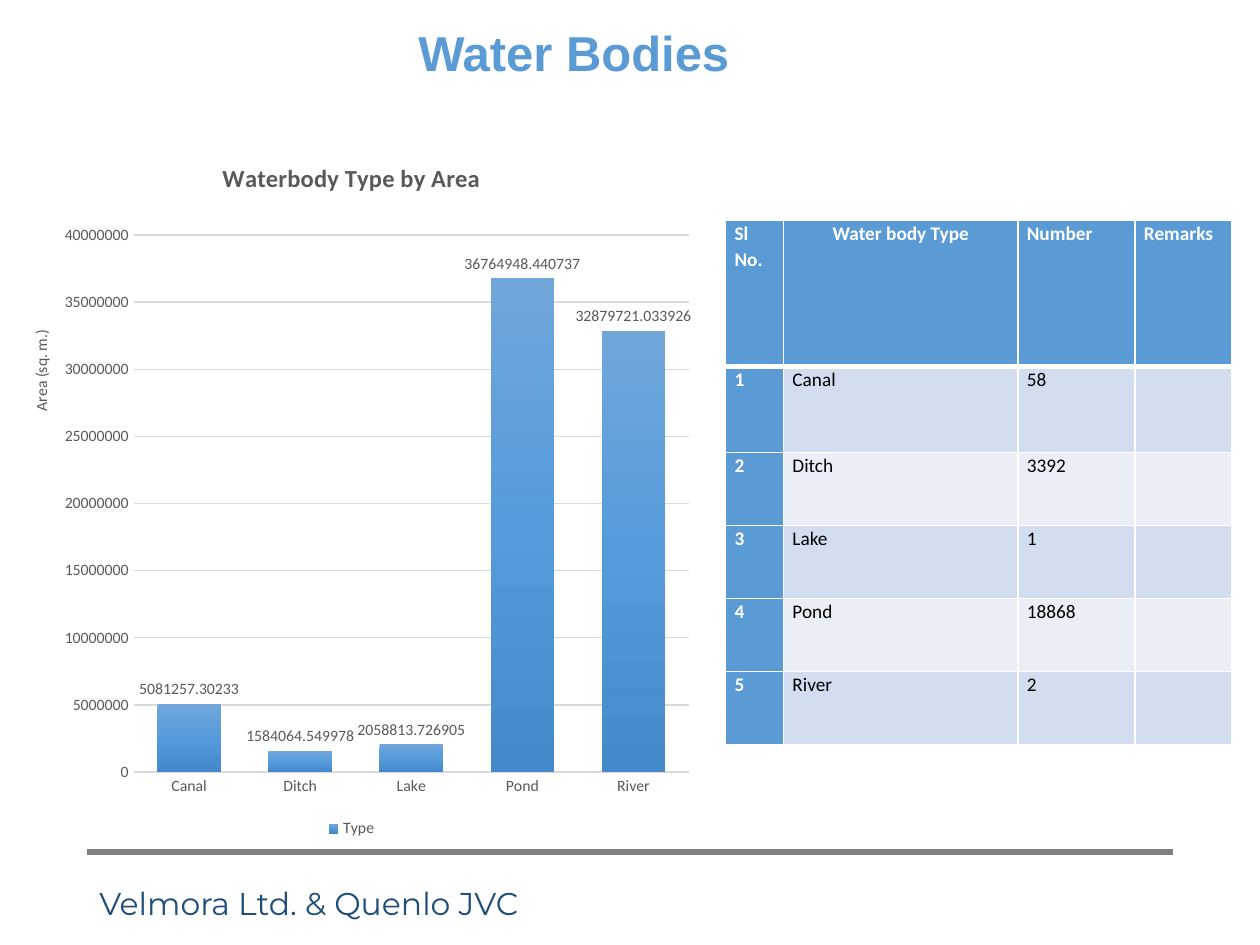
from lxml import etree
from pptx import Presentation
from pptx.chart.data import CategoryChartData
from pptx.dml.color import RGBColor
from pptx.enum.chart import XL_CHART_TYPE, XL_LABEL_POSITION, XL_LEGEND_POSITION, XL_TICK_MARK
from pptx.enum.shapes import MSO_CONNECTOR
from pptx.enum.text import MSO_ANCHOR, PP_ALIGN
from pptx.oxml import parse_xml
from pptx.oxml.ns import nsdecls, qn
from pptx.util import Inches, Pt

COLUMN = XL_CHART_TYPE.COLUMN_CLUSTERED
OUTSIDE_END = XL_LABEL_POSITION.OUTSIDE_END
BOTTOM = XL_LEGEND_POSITION.BOTTOM
NO_TICK = XL_TICK_MARK.NONE
STRAIGHT = MSO_CONNECTOR.STRAIGHT
TOP, MIDDLE = MSO_ANCHOR.TOP, MSO_ANCHOR.MIDDLE
LEFT, CENTER = PP_ALIGN.LEFT, PP_ALIGN.CENTER

COLORS = {
    "blue": "5B9BD5", "navy": "1F4E79", "rule": "808080", "grid": "D9D9D9",
    "label": "595959", "white": "FFFFFF", "black": "000000",
    "band_dark": "D2DEEF", "band_light": "EAEFF7",
}
GRADIENT = [(0, "71A6DB"), (50, "559BDB"), (100, "448ACA")]
BODIES = [
    ("Canal", 58, 5081257.30233),
    ("Ditch", 3392, 1584064.549978),
    ("Lake", 1, 2058813.726905),
    ("Pond", 18868, 36764948.440737),
    ("River", 2, 32879721.033926),
]
HEADERS = ["Sl No.", "Water body Type", "Number", "Remarks"]
COL_WIDTHS = [0.46, 1.86, 0.93, 0.77]
ROW_HEIGHTS = [1.16, 0.68] + [0.58] * 4


def rgb(name):
    return RGBColor.from_string(COLORS[name])


def set_font(font, size, color, bold=False, name="Calibri"):
    font.size, font.bold, font.name = Pt(size), bold, name
    font.color.rgb = rgb(color)


def write_text(tf, text, size=11, color="black", bold=False, name="Calibri",
               align=LEFT, spacing=None):
    p = tf.paragraphs[0]
    p.alignment = align
    if spacing:
        p.line_spacing = spacing
    r = p.add_run()
    r.text = text
    set_font(r.font, size, color, bold, name)


def set_layout(parent, before, x, y, w=None, h=None):
    for old in parent.findall(qn("c:layout")):
        parent.remove(old)
    target = '<c:layoutTarget val="inner"/>' if w else ""
    size = f'<c:w val="{w}"/><c:h val="{h}"/>' if w else ""
    layout = parse_xml(
        f'<c:layout {nsdecls("c")}><c:manualLayout>{target}'
        '<c:xMode val="edge"/><c:yMode val="edge"/>'
        f'<c:x val="{x}"/><c:y val="{y}"/>{size}</c:manualLayout></c:layout>')
    parent.find(qn(before)).addprevious(layout)


def add_title(s):
    sp = s.shapes.title
    sp.left, sp.top, sp.width, sp.height = map(Inches, (2.87, 0.11, 3.41, 0.81))
    tf = sp.text_frame
    tf.vertical_anchor = TOP
    tf.margin_left, tf.margin_right = Inches(0.45), Inches(0.1)
    tf.margin_top, tf.margin_bottom = Inches(0.07), 0
    write_text(tf, "Water Bodies", 28, "blue", True, "Arial", spacing=1.0)


def add_footer(s):
    line = s.shapes.add_connector(STRAIGHT, Inches(0.69), Inches(6.76),
                                  Inches(9.31), Inches(6.76))
    line.line.color.rgb = rgb("rule")
    line.line.width = Pt(3.25)
    etree.SubElement(line._element.spPr, qn("a:effectLst"))
    box = s.shapes.add_textbox(Inches(0.69), Inches(6.9), Inches(5.39), Inches(0.53))
    tf = box.text_frame
    tf.word_wrap = True
    tf.vertical_anchor = MIDDLE
    write_text(tf, "Velmora Ltd. & Quenlo JVC", 18, "navy", name="Montserrat")


def add_borders(cell, header, first_body):
    tc_pr = cell._tc.get_or_add_tcPr()
    widths = {"L": 1, "R": 1, "T": 3 if first_body else 1, "B": 3 if header else 1}
    for side, width in widths.items():
        tc_pr.append(parse_xml(
            f'<a:ln{side} {nsdecls("a")} w="{Pt(width)}"><a:solidFill>'
            f'<a:srgbClr val="{COLORS["white"]}"/></a:solidFill></a:ln{side}>'))


def add_body_table(s):
    rows = [HEADERS] + [[str(i), name, str(count), ""]
                        for i, (name, count, _) in enumerate(BODIES, 1)]
    table = s.shapes.add_table(len(rows), len(HEADERS), Inches(5.76), Inches(1.75),
                               Inches(sum(COL_WIDTHS)), Inches(sum(ROW_HEIGHTS))).table
    for col, width in zip(table.columns, COL_WIDTHS):
        col.width = Inches(width)
    for i, (row, values) in enumerate(zip(table.rows, rows)):
        row.height = Inches(ROW_HEIGHTS[i])
        for j, (cell, text) in enumerate(zip(row.cells, values)):
            strong = i == 0 or j == 0
            add_borders(cell, i == 0, i == 1)
            cell.fill.solid()
            cell.fill.fore_color.rgb = rgb(
                "blue" if strong else "band_dark" if i % 2 else "band_light")
            cell.margin_left = cell.margin_right = Inches(0.07)
            cell.margin_top = cell.margin_bottom = 0
            if text:
                write_text(cell.text_frame, text, color="white" if strong else "black",
                           bold=strong, align=CENTER if (i, j) == (0, 1) else LEFT,
                           spacing=1.07)


def style_axes(chart):
    cat, val = chart.category_axis, chart.value_axis
    for axis in (cat, val):
        axis.major_tick_mark = axis.minor_tick_mark = NO_TICK
        set_font(axis.tick_labels.font, 9, "label")
    cat.format.line.color.rgb = rgb("grid")
    cat.format.line.width = Pt(1)
    val.format.line.fill.background()
    val.minimum_scale, val.maximum_scale, val.major_unit = 0, 40000000, 5000000
    val.major_gridlines.format.line.color.rgb = rgb("grid")
    val.major_gridlines.format.line.width = Pt(0.75)
    write_text(val.axis_title.text_frame, "Area (sq. m.)", 9, "label", align=CENTER)
    set_layout(val.axis_title._element, "c:overlay", 0.04, 0.27)


def style_series(plot):
    plot.gap_width = 75
    plot.vary_by_categories = False
    stops = "".join(f'<a:gs pos="{pos * 1000}"><a:srgbClr val="{color}"/></a:gs>'
                    for pos, color in GRADIENT)
    sp_pr = plot.series[0]._element.get_or_add_spPr()
    sp_pr.append(parse_xml(f'<a:gradFill {nsdecls("a")}><a:gsLst>{stops}</a:gsLst>'
                           '<a:lin ang="5400000" scaled="0"/></a:gradFill>'))
    labels = plot.series[0].data_labels
    labels.show_value = True
    labels.position = OUTSIDE_END
    set_font(labels.font, 9, "label")


def add_area_chart(s):
    data = CategoryChartData()
    data.categories = [name for name, _, _ in BODIES]
    data.add_series("Type", [area for _, _, area in BODIES])
    chart = s.shapes.add_chart(COLUMN, Inches(0), Inches(1.08), Inches(5.58),
                               Inches(5.61), data).chart
    set_font(chart.font, 10, "black")
    write_text(chart.chart_title.text_frame, "Waterbody Type by Area", 14, "label",
               True, align=CENTER)
    chart.chart_title.include_text_in_layout = False
    chart.has_legend = True
    chart.legend.position = BOTTOM
    chart.legend.include_in_layout = False
    set_font(chart.legend.font, 9, "label")
    style_axes(chart)
    style_series(chart.plots[0])
    plot_area = chart._chartSpace.chart.plotArea
    set_layout(plot_area, "c:barChart", 0.19, 0.14, 0.79, 0.76)


def main():
    prs = Presentation()
    prs.slide_width, prs.slide_height = Inches(10), Inches(7.5)
    s = prs.slides.add_slide(prs.slide_layouts[5])
    add_footer(s)
    add_body_table(s)
    add_title(s)
    add_area_chart(s)
    prs.save("out.pptx")


if __name__ == "__main__":
    main()
